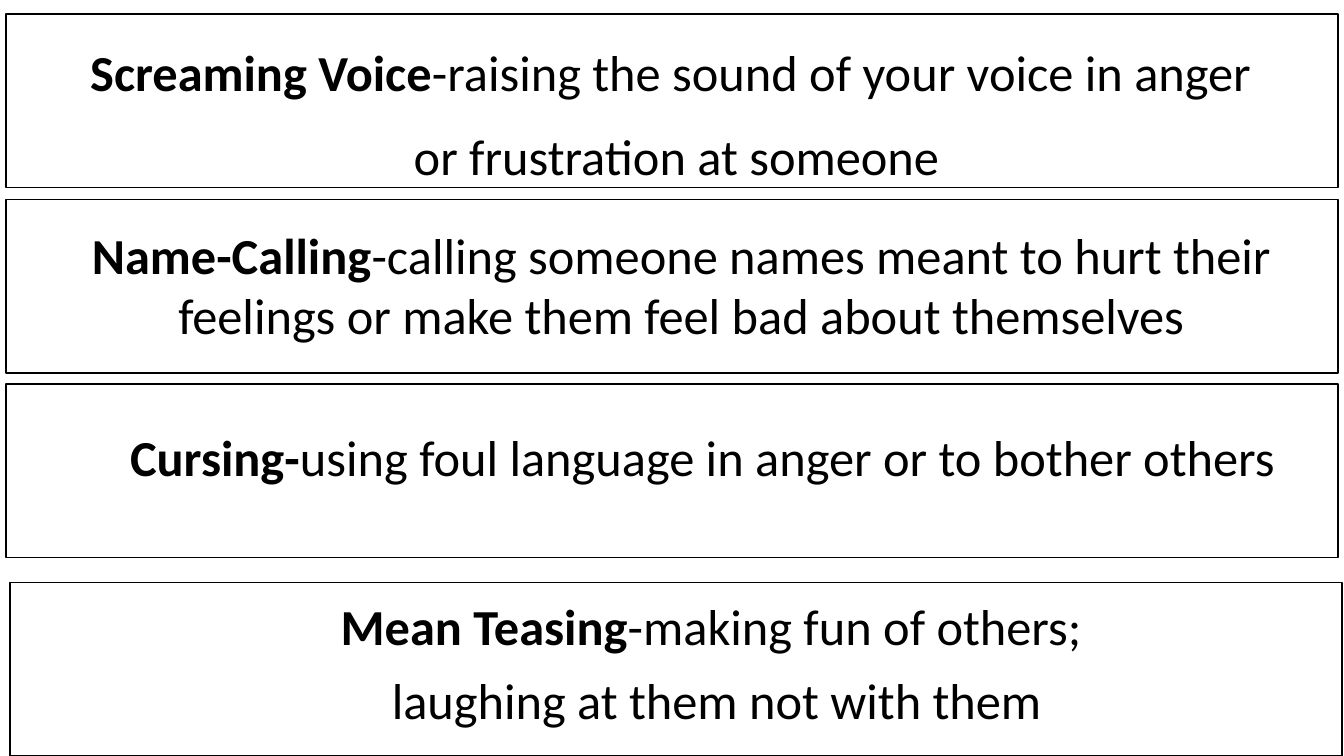
"""Build a slide of four framed definitions of hurtful speech."""
from dataclasses import dataclass

from pptx import Presentation
from pptx.dml.color import RGBColor
from pptx.enum.shapes import MSO_SHAPE
from pptx.enum.text import MSO_ANCHOR, PP_ALIGN
from pptx.slide import Slide
from pptx.util import Inches, Pt

BLACK = RGBColor(0x00, 0x00, 0x00)
WHITE = RGBColor(0xFF, 0xFF, 0xFF)
RECT = MSO_SHAPE.RECTANGLE
TOP = MSO_ANCHOR.TOP
CENTER = PP_ALIGN.CENTER
FONT = "Calibri"
SIZE = Pt(36)
FRAME_W, FRAME_H = 13.21, 1.72
TEXT_W = 13.04


@dataclass(frozen=True)
class Card:
    left: float
    top: float
    text_x: float
    text_y: float
    text_h: float
    term: str
    lines: tuple[str, ...]
    pitch: float = 1.0
    after: int = 0


CARDS = (
    Card(0.06, 0.14, 0.19, 0.27, 1.59, "Screaming Voice",
         ("-raising the sound of your voice in anger ",
          "or frustration at someone"), 1.15, 10),
    Card(0.06, 1.98, 0.24, 2.17, 1.31, "Name-Calling",
         ("-calling someone names meant to hurt their feelings "
          "or make them feel bad about themselves",)),
    Card(0.06, 3.81, 0.45, 4.18, 0.71, "Cursing-",
         ("using foul language in anger or to bother others",)),
    Card(0.1, 5.78, 0.59, 5.85, 1.45, "Mean Teasing",
         ("-making fun of others; ",
          "laughing at them not with them"), 1.0, 10),
)


def draw_frame(slide: Slide, card: Card) -> None:
    frame = slide.shapes.add_shape(
        RECT, Inches(card.left), Inches(card.top),
        Inches(FRAME_W), Inches(FRAME_H))
    frame.shadow.inherit = False
    frame.fill.solid()
    frame.fill.fore_color.rgb = WHITE
    frame.line.color.rgb = BLACK
    frame.line.width = Pt(1)


def draw_text(slide: Slide, card: Card) -> None:
    box = slide.shapes.add_textbox(
        Inches(card.text_x), Inches(card.text_y),
        Inches(TEXT_W), Inches(card.text_h))
    body = box.text_frame
    body.word_wrap = True
    body.vertical_anchor = TOP
    for index, line in enumerate(card.lines):
        para = body.add_paragraph() if index else body.paragraphs[0]
        para.alignment = CENTER
        para.line_spacing = card.pitch
        para.space_after = Pt(card.after)
        parts = [(line, False)]
        if index == 0:
            parts.insert(0, (card.term, True))
        for text, bold in parts:
            run = para.add_run()
            run.text = text
            run.font.name = FONT
            run.font.size = SIZE
            run.font.bold = bold
            run.font.color.rgb = BLACK


def main() -> None:
    deck = Presentation()
    deck.slide_width = Inches(13.33)
    deck.slide_height = Inches(7.5)
    slide = deck.slides.add_slide(deck.slide_layouts[6])
    for card in CARDS:
        draw_frame(slide, card)
        draw_text(slide, card)
    deck.save("out.pptx")


if __name__ == "__main__":
    main()
